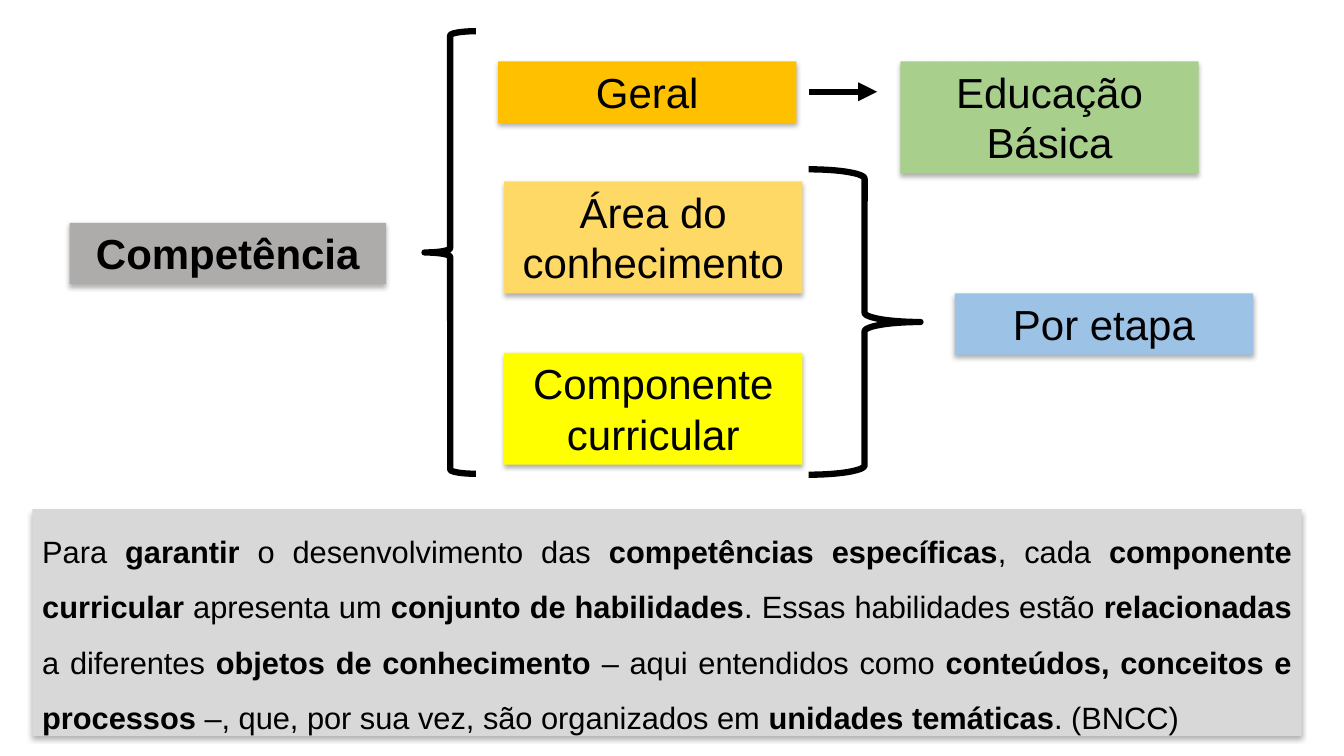
import pptx
import pptx.dml.color
import pptx.enum.shapes
import pptx.enum.text
import pptx.oxml.ns
import pptx.util
from lxml import etree
from pptx.util import Inches

COLORS = {
    "black": "000000", "gray": "AEABAB", "orange": "FFC000", "gold": "FFD966",
    "yellow": "FFFF00", "green": "A8D08C", "blue": "9CC2E5", "light gray": "D8D8D8",
}
FONT = "Arial"
LABEL_SIZE, SUMMARY_SIZE, LINE_WIDTH = 30, 22, 4.5
LABEL_WIDTH = 2.96
LABEL_HEIGHTS = {1: 0.61, 2: 1.11}

# text, left, top, width, lines of text, fill, bold
LABELS = [
    ("Competência", 0.69, 2.21, 3.14, 1, "gray", True),
    ("Geral", 4.94, 0.61, LABEL_WIDTH, 1, "orange", False),
    ("Área do conhecimento", 5, 1.8, LABEL_WIDTH, 2, "gold", False),
    ("Componente curricular", 5, 3.5, LABEL_WIDTH, 2, "yellow", False),
    ("Educação Básica", 8.93, 0.61, LABEL_WIDTH, 2, "green", False),
    ("Por etapa", 9.47, 2.91, LABEL_WIDTH, 1, "blue", False),
]
BRACES = [
    ("LEFT_BRACE", (4.21, 0.31, 0.51, 4.39)),
    ("RIGHT_BRACE", (8.02, 1.68, 1.11, 3.03)),
]
ARROW = (8.02, 0.91, 8.7, 0.91)
SUMMARY_FRAME = (0.32, 5.05, 12.59, 2.25)
# Every second piece between asterisks is bold
SUMMARY = (
    "Para *garantir* o desenvolvimento das *competências específicas*, cada "
    "*componente curricular* apresenta um *conjunto de habilidades*. Essas "
    "habilidades estão *relacionadas* a diferentes *objetos de conhecimento *"
    "– aqui entendidos como *conteúdos, conceitos e processos *–, que, por sua "
    "vez, são organizados em *unidades temáticas*. (BNCC)"
)


def rgb(name):
    return pptx.dml.color.RGBColor.from_string(COLORS[name])


def add_child(parent, tag, **attributes):
    return etree.SubElement(parent, pptx.oxml.ns.qn(tag), attributes)


def add_soft_shadow(shape):
    shape.shadow.inherit = False
    effects = shape._element.spPr.find(pptx.oxml.ns.qn("a:effectLst"))
    shadow = add_child(effects, "a:outerShdw", blurRad=str(pptx.util.Pt(3.5)),
                       dist=str(pptx.util.Pt(2.2)), dir="5400000", rotWithShape="0")
    color = add_child(shadow, "a:srgbClr", val=COLORS["black"])
    add_child(color, "a:alpha", val="31000")


def style_line(line):
    line.color.rgb = rgb("black")
    line.width = pptx.util.Pt(LINE_WIDTH)


def add_text_box(slide, frame, fill, pieces, size, alignment, spacing=None):
    """Add a shadowed rectangle; pieces are (text, bold) pairs."""
    box = slide.shapes.add_shape(
        pptx.enum.shapes.MSO_SHAPE.RECTANGLE, *map(Inches, frame))
    box.fill.solid()
    box.fill.fore_color.rgb = rgb(fill)
    box.line.fill.background()
    add_soft_shadow(box)
    text = box.text_frame
    text.word_wrap = True
    text.vertical_anchor = pptx.enum.text.MSO_ANCHOR.TOP
    para = text.paragraphs[0]
    para.alignment = alignment
    para.line_spacing = spacing
    for words, bold in pieces:
        span = para.add_run()
        span.text = words
        span.font.name = FONT
        span.font.size = pptx.util.Pt(size)
        span.font.bold = bold
        span.font.color.rgb = rgb("black")


def add_brace(slide, kind, frame):
    brace = slide.shapes.add_shape(
        pptx.enum.shapes.MSO_SHAPE[kind], *map(Inches, frame))
    brace.fill.background()
    style_line(brace.line)
    brace.shadow.inherit = False


def add_arrow(slide, ends):
    arrow = slide.shapes.add_connector(
        pptx.enum.shapes.MSO_CONNECTOR.STRAIGHT, *map(Inches, ends))
    style_line(arrow.line)
    add_child(arrow.line._get_or_add_ln(), "a:tailEnd", type="triangle")
    add_child(arrow._element.spPr, "a:effectLst")


def main():
    deck = pptx.Presentation()
    deck.slide_width, deck.slide_height = Inches(13.33), Inches(7.5)
    slide = deck.slides.add_slide(deck.slide_layouts[6])
    align = pptx.enum.text.PP_ALIGN
    for words, left, top, width, lines, fill, bold in LABELS:
        frame = (left, top, width, LABEL_HEIGHTS[lines])
        add_text_box(slide, frame, fill, [(words, bold)], LABEL_SIZE, align.CENTER)
    for kind, frame in BRACES:
        add_brace(slide, kind, frame)
    add_arrow(slide, ARROW)
    pieces = [(words, index % 2 == 1) for index, words in enumerate(SUMMARY.split("*"))]
    add_text_box(slide, SUMMARY_FRAME, "light gray", pieces, SUMMARY_SIZE,
                 align.JUSTIFY, spacing=1.5)
    deck.save("out.pptx")


if __name__ == "__main__":
    main()
